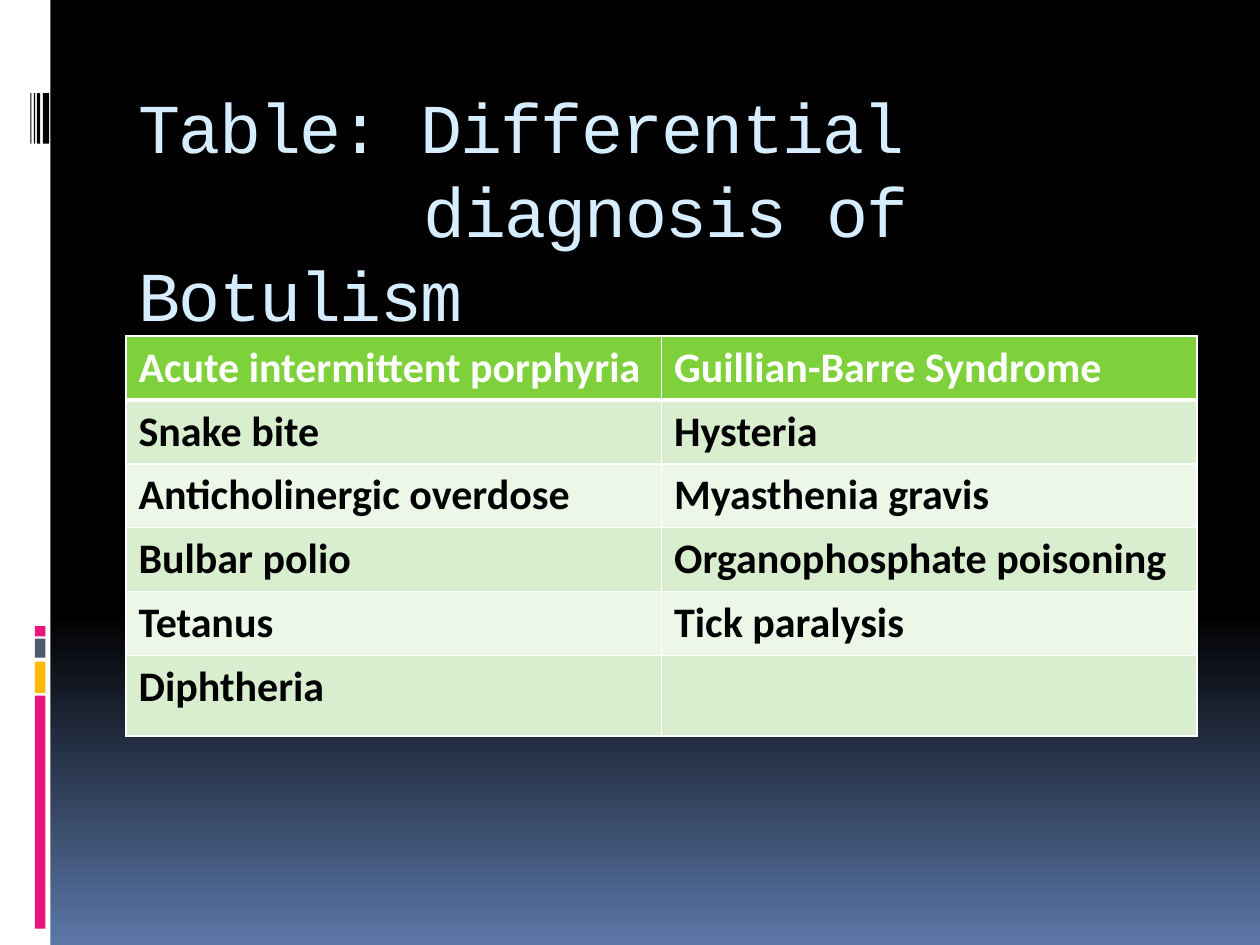
"""Build a slide with a table on the differential diagnosis of botulism."""
from dataclasses import dataclass

import lxml.etree
import pptx
import pptx.dml.color
import pptx.enum.shapes
import pptx.enum.text
import pptx.oxml.ns
import pptx.util

Pt = pptx.util.Pt
Color = pptx.dml.color.RGBColor.from_string
qn = pptx.oxml.ns.qn


@dataclass(frozen=True)
class Theme:
    white: str = "FFFFFF"
    black: str = "000000"
    blue: str = "5B77A8"
    pale: str = "D6ECFF"
    pink: str = "EA157A"
    gold: str = "FEB80A"
    slate: str = "4E5B6F"
    head: str = "7FD13B"
    bands: tuple[str, str] = ("D8EECE", "ECF7E8")
    title: int = 40
    body: int = 24
    mono: str = "Courier New"
    sans: str = "Calibri"


@dataclass(frozen=True)
class Bar:
    left: float
    top: float
    width: float
    height: float
    fill: str


THEME = Theme()
BARS = [
    Bar(0, 0, 28.8, 540, THEME.white),
    Bar(20, 397.5, 6, 133.2, THEME.pink),
    Bar(20, 378, 6, 18, THEME.gold),
    Bar(20, 365, 6, 10.8, THEME.slate),
    Bar(20, 357.8, 6, 5.8, THEME.pink),
] + [
    Bar(left, 53.3, width, 28.8, THEME.black)
    for left, width in ((24.5, 3.6), (21, 2), (19.4, 0.8), (17.3, 0.6))
]
ROWS = [
    ("Acute intermittent porphyria", "Guillian-Barre Syndrome"),
    ("Snake bite", "Hysteria"),
    ("Anticholinergic overdose", "Myasthenia gravis"),
    ("Bulbar polio", "Organophosphate poisoning"),
    ("Tetanus", "Tick paralysis"),
    ("Diphtheria", ""),
]


def set_font(para, name: str, size: int, color: str, bold: bool = False) -> None:
    font = para.font
    font.name, font.size, font.bold = name, Pt(size), bold
    font.color.rgb = Color(color)


def draw_back(slide) -> None:
    fill = slide.background.fill
    fill.gradient()
    fill.gradient_angle = 270
    for stop, place, color in zip(
        fill.gradient_stops, (0.65, 1), (THEME.black, THEME.blue)
    ):
        stop.position = place
        stop.color.rgb = Color(color)


def draw_bar(slide, bar: Bar) -> None:
    shape = slide.shapes.add_shape(
        pptx.enum.shapes.MSO_SHAPE.RECTANGLE,
        Pt(bar.left), Pt(bar.top), Pt(bar.width), Pt(bar.height),
    )
    shape.shadow.inherit = False
    shape.fill.solid()
    shape.fill.fore_color.rgb = Color(bar.fill)
    shape.line.fill.background()


def draw_title(slide) -> None:
    title = slide.shapes.title
    title.left, title.top = Pt(72), Pt(40)
    title.width, title.height = Pt(612), Pt(72)
    frame = title.text_frame
    frame.word_wrap = True
    frame.auto_size = pptx.enum.text.MSO_AUTO_SIZE.NONE
    frame.vertical_anchor = pptx.enum.text.MSO_ANCHOR.TOP
    frame.margin_top = Pt(8)
    para = frame.paragraphs[0]
    para.text = "Table: Differential\v\tdiagnosis of\vBotulism"
    para.alignment = pptx.enum.text.PP_ALIGN.LEFT
    para.line_spacing = Pt(48)
    props = para._p.get_or_add_pPr()
    tabs = lxml.etree.SubElement(props, qn("a:tabLst"))
    lxml.etree.SubElement(tabs, qn("a:tab"), pos=str(Pt(163)), algn="l")
    set_font(para, THEME.mono, THEME.title, THEME.pale)
    props.find(qn("a:defRPr")).set("spc", "-100")


def add_edge(cell, side: str, width: float) -> None:
    line = lxml.etree.SubElement(
        cell._tc.get_or_add_tcPr(), qn(f"a:ln{side}"), w=str(Pt(width))
    )
    fill = lxml.etree.SubElement(line, qn("a:solidFill"))
    lxml.etree.SubElement(fill, qn("a:srgbClr"), val=THEME.white)


def draw_cell(cell, text: str, row: int) -> None:
    head = row == 0
    for side, thick in (("L", False), ("R", False), ("T", row == 1), ("B", head)):
        add_edge(cell, side, 3 if thick else 1)
    cell.fill.solid()
    cell.fill.fore_color.rgb = Color(THEME.head if head else THEME.bands[(row - 1) % 2])
    para = cell.text_frame.paragraphs[0]
    para.text = text
    set_font(para, THEME.sans, THEME.body, THEME.white if head else THEME.black, True)


def draw_table(slide) -> None:
    table = slide.shapes.add_table(
        len(ROWS), 2, Pt(72), Pt(192), Pt(612), Pt(228.5)
    ).table
    for row, texts in enumerate(ROWS):
        table.rows[row].height = Pt(46 if row == len(ROWS) - 1 else 36.5)
        for col, text in enumerate(texts):
            draw_cell(table.cell(row, col), text, row)


def main() -> None:
    deck = pptx.Presentation()
    deck.slide_width, deck.slide_height = Pt(720), Pt(540)
    slide = deck.slides.add_slide(deck.slide_layouts.get_by_name("Title Only"))
    draw_back(slide)
    for bar in BARS:
        draw_bar(slide, bar)
    draw_title(slide)
    draw_table(slide)
    deck.save("out.pptx")


if __name__ == "__main__":
    main()
